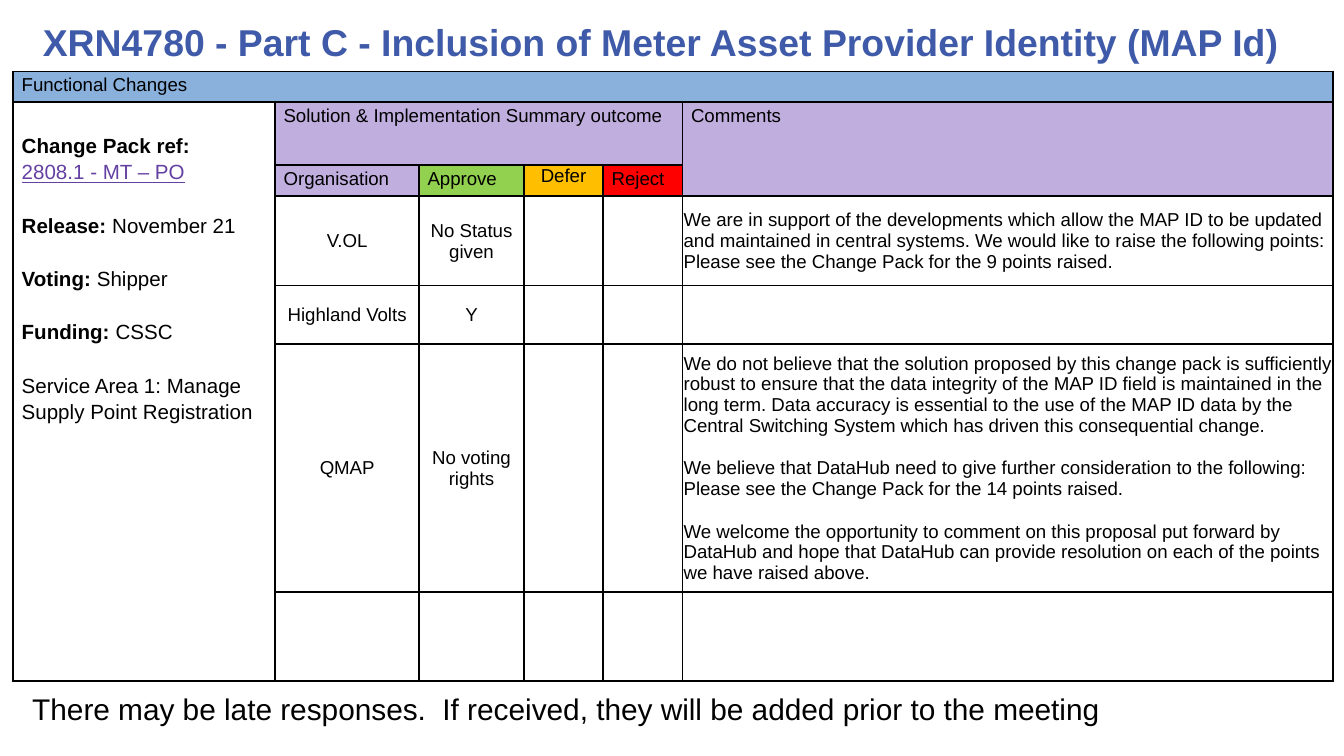
from lxml import etree
from pptx import Presentation
from pptx.dml.color import RGBColor
from pptx.enum import text
from pptx.oxml import ns
from pptx.util import Cm, Pt

BLACK = RGBColor(0x00, 0x00, 0x00)
TITLE_BLUE = RGBColor(0x3E, 0x5A, 0xA8)
LINK_PURPLE = RGBColor(0x64, 0x40, 0xA3)
BAND_BLUE = RGBColor(0x89, 0xB1, 0xDC)
LILAC = RGBColor(0xC0, 0xAE, 0xDF)
GREEN = RGBColor(0x92, 0xD0, 0x50)
AMBER = RGBColor(0xFF, 0xBF, 0x00)
RED = RGBColor(0xFF, 0x00, 0x00)

COLUMN_WIDTHS = [4.95, 2.72, 1.98, 1.5, 1.5, 12.29]
ROW_HEIGHTS = [0.58, 1.19, 0.58, 1.7, 1.1, 4.69, 1.68]
MERGES = [((0, 0), (0, 5)), ((1, 0), (6, 0)), ((1, 1), (1, 4)), ((1, 5), (2, 5))]

# row, column, wording, fill
HEADINGS = [
    (0, 0, "Functional Changes", BAND_BLUE),
    (1, 1, "Solution & Implementation Summary outcome", LILAC),
    (1, 5, "Comments", LILAC),
    (2, 1, "Organisation", LILAC),
    (2, 2, "Approve", GREEN),
    (2, 4, "Reject", RED),
]

# bold label, plain value, whether a gap comes before
CHANGE_DETAILS = [
    ("Change Pack ref:\u00a0", "", False),
    ("", "2808.1 - MT – PO", False),
    ("Release: ", "November 21", True),
    ("Voting: ", "Shipper", True),
    ("Funding: ", "CSSC", True),
    ("", "Service Area 1: Manage Supply Point Registration", True),
]
REFERENCE_LINE = 1

# organisation, approval, comment paragraphs, gap between the paragraphs
RESPONSES = [
    ("V.OL", "No Status given", [
        "We are in support of the developments which allow the MAP ID to be updated "
        "and maintained in central systems. We would like to raise the following points:",
        "Please see the Change Pack for the 9 points raised.",
    ], 0),
    ("Highland Volts", "Y", [], 0),
    ("QMAP", "No voting rights", [
        "We do not believe that the solution proposed by this change pack is sufficiently "
        "robust to ensure that the data integrity of the MAP ID field is maintained in the "
        "long term. Data accuracy is essential to the use of the MAP ID data by the "
        "Central Switching System which has driven this consequential change.",
        "We believe that DataHub need to give further consideration to the following: "
        "Please see the Change Pack for the 14 points raised.",
        "We welcome the opportunity to comment on this proposal put forward by "
        "DataHub and hope that DataHub can provide resolution on each of the points "
        "we have raised above.",
    ], 11.5),
]


def style_run(run, size, color=BLACK, bold=False):
    run.font.name = "Arial"
    run.font.size = Pt(size)
    run.font.bold = bold
    run.font.color.rgb = color


def add_line_of_text(slide, left, top, width, height, wording, size, color, bold=False):
    box = slide.shapes.add_textbox(Cm(left), Cm(top), Cm(width), Cm(height))
    box.text_frame.word_wrap = True
    box.text_frame.auto_size = text.MSO_AUTO_SIZE.SHAPE_TO_FIT_TEXT
    box.text_frame.text = wording
    style_run(box.text_frame.paragraphs[0].runs[0], size, color, bold)


def set_margins(cell, side, top=0):
    cell.margin_left = cell.margin_right = Cm(side)
    cell.margin_top = Cm(top)
    cell.margin_bottom = 0


def add_borders(cell):
    properties = cell._tc.get_or_add_tcPr()
    for side in ("lnL", "lnR", "lnT", "lnB"):
        line = etree.SubElement(properties, ns.qn(f"a:{side}"), w=str(Pt(1)))
        fill = etree.SubElement(line, ns.qn("a:solidFill"))
        etree.SubElement(fill, ns.qn("a:srgbClr"), val=str(BLACK))


def fill_cell(cell, color):
    cell.fill.solid()
    cell.fill.fore_color.rgb = color


def write_heading(cell, wording, color):
    set_margins(cell, 0.16)
    fill_cell(cell, color)
    cell.text_frame.text = wording
    heading = cell.text_frame.paragraphs[0]
    heading.line_spacing = 1.15
    style_run(heading.runs[0], 10)


def write_body(cell, paragraphs, align, gap=0):
    set_margins(cell, 0.02, 0.02)
    cell.vertical_anchor = text.MSO_ANCHOR.MIDDLE
    cell.text_frame.text = "\n".join(paragraphs)
    for index, paragraph in enumerate(cell.text_frame.paragraphs):
        paragraph.alignment = align
        if index and gap:
            paragraph.space_before = Pt(gap)
        for run in paragraph.runs:
            style_run(run, 10)


def write_change_details(cell):
    set_margins(cell, 0.16, 0.56)
    frame = cell.text_frame
    for index, (label, value, gap) in enumerate(CHANGE_DETAILS):
        paragraph = frame.add_paragraph() if index else frame.paragraphs[0]
        paragraph.line_spacing = 1.15
        if gap:
            paragraph.space_before = Pt(14.5)
        for wording, bold in ((label, True), (value, False)):
            if wording:
                run = paragraph.add_run()
                run.text = wording
                style_run(run, 11, bold=bold)
    reference = frame.paragraphs[REFERENCE_LINE].runs[0]
    reference.font.underline = True
    reference.font.color.rgb = LINK_PURPLE


def add_response_table(slide):
    frame = slide.shapes.add_table(
        len(ROW_HEIGHTS), len(COLUMN_WIDTHS), Cm(0.25), Cm(1.35),
        Cm(sum(COLUMN_WIDTHS)), Cm(sum(ROW_HEIGHTS)))
    table = frame.table
    table.first_row = table.horz_banding = False
    for column, width in zip(table.columns, COLUMN_WIDTHS):
        column.width = Cm(width)
    for row, height in zip(table.rows, ROW_HEIGHTS):
        row.height = Cm(height)
    for cell in table.iter_cells():
        add_borders(cell)
        cell.fill.background()
    for first, last in MERGES:
        table.cell(*first).merge(table.cell(*last))

    for row, column, wording, color in HEADINGS:
        write_heading(table.cell(row, column), wording, color)
    defer = table.cell(2, 3)
    write_body(defer, ["Defer"], text.PP_ALIGN.CENTER)
    defer.vertical_anchor = text.MSO_ANCHOR.TOP
    fill_cell(defer, AMBER)

    write_change_details(table.cell(1, 0))
    for row, (organisation, approval, comments, gap) in enumerate(RESPONSES, start=3):
        write_body(table.cell(row, 1), [organisation], text.PP_ALIGN.CENTER)
        write_body(table.cell(row, 2), [approval], text.PP_ALIGN.CENTER)
        write_body(table.cell(row, 5), comments, text.PP_ALIGN.LEFT, gap)


def main():
    deck = Presentation()
    deck.slide_width, deck.slide_height = Cm(25.4), Cm(14.29)
    slide = deck.slides.add_slide(deck.slide_layouts[6])
    add_line_of_text(
        slide, 0.56, 0.23, 24.66, 1.12,
        "XRN4780 - Part C - Inclusion of Meter Asset Provider Identity (MAP Id)",
        20, TITLE_BLUE, bold=True)
    add_response_table(slide)
    add_line_of_text(
        slide, 0.36, 12.93, 24.66, 0.94,
        "There may be late responses.  If received, they will be added prior to the meeting",
        16, BLACK)
    deck.save("out.pptx")


if __name__ == "__main__":
    main()
